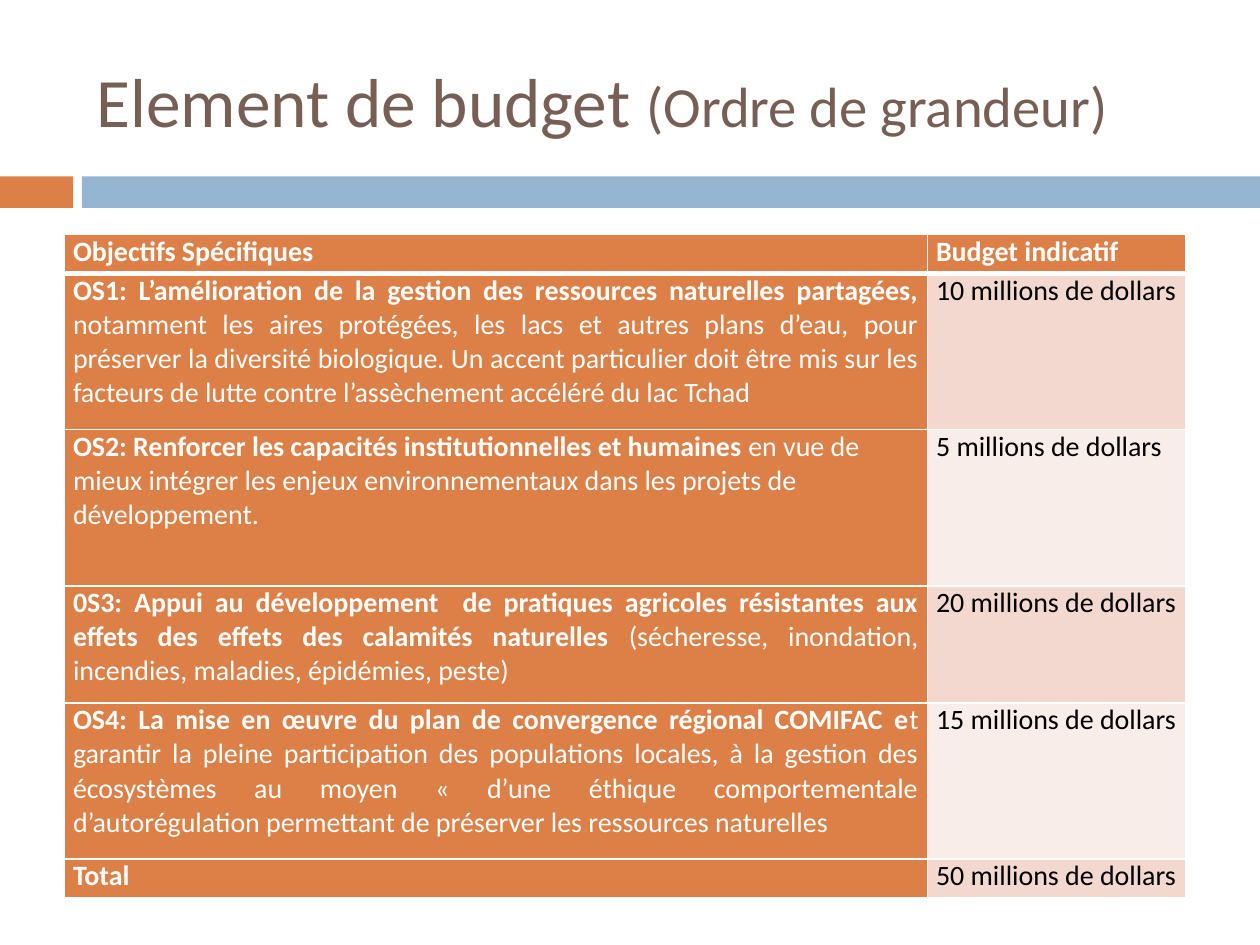
import pptx
import pptx.util
import pptx.dml.color
import pptx.enum.shapes
import pptx.enum.text
import pptx.oxml.ns
from lxml import etree

Inches, Pt = pptx.util.Inches, pptx.util.Pt
ALIGN = pptx.enum.text.PP_ALIGN
ANCHOR = pptx.enum.text.MSO_ANCHOR

# Content: each line is a list of (text, is_bold) runs
COLORS = {"orange": "DD8047", "blue": "94B6D2", "brown": "775F55", "white": "FFFFFF",
          "black": "000000", "band_dark": "F2D8CF", "band_light": "F9EDE9"}
TITLE = [("Element de budget ", 39.6), ("(Ordre de grandeur)", 32.4)]
HEADER = ("Objectifs Spécifiques", "Budget indicatif")
# bold lead, regular text, budget, row height
OBJECTIVES = [
    ("OS1: L’amélioration de la gestion des ressources naturelles partagées, ",
     "notamment les aires protégées, les lacs et autres plans d’eau, pour préserver la "
     "diversité biologique. Un accent particulier doit être mis sur les facteurs de lutte "
     "contre l’assèchement accéléré du lac Tchad",
     "10 millions de dollars", 1.24),
    ("OS2: Renforcer les capacités institutionnelles et humaines",
     " en vue de mieux intégrer les enjeux environnementaux dans les projets de développement.",
     "5 millions de dollars", 1.24),
    ("0S3: Appui au développement  de pratiques agricoles résistantes aux effets des effets "
     "des calamités naturelles ",
     "(sécheresse, inondation, incendies, maladies, épidémies, peste)",
     "20 millions de dollars", 0.93),
    ("OS4: La mise en œuvre du plan de convergence régional COMIFAC e",
     "t garantir la pleine participation des populations locales, à la gestion des "
     "écosystèmes au moyen « d’une éthique comportementale d’autorégulation permettant de "
     "préserver les ressources naturelles",
     "15 millions de dollars", 1.24),
    ("Total", "", "50 millions de dollars", 0.31),
]
LEFT_ALIGNED_ROW = 2
HEADER_HEIGHT = 0.31
COL_WIDTHS = (6.85, 2.05)


def rgb(name):
    return pptx.dml.color.RGBColor.from_string(COLORS[name])


def add_run(p, text, size=16, color="white", bold=False):
    r = p.add_run()
    r.text = text
    r.font.name = "Calibri"
    r.font.size = Pt(size)
    r.font.bold = bold
    r.font.color.rgb = rgb(color)


def add_bar(s, left, width, color):
    bar = s.shapes.add_shape(pptx.enum.shapes.MSO_SHAPE.RECTANGLE,
                             Inches(left), Inches(1.4), Inches(width), Inches(0.25))
    bar.shadow.inherit = False
    bar.fill.solid()
    bar.fill.fore_color.rgb = rgb(color)
    bar.line.fill.background()


def set_borders(cell, top=1, bottom=1):
    tc_pr = cell._tc.get_or_add_tcPr()
    qn = pptx.oxml.ns.qn
    for side, width in (("L", 1), ("R", 1), ("T", top), ("B", bottom)):
        ln = etree.SubElement(tc_pr, qn(f"a:ln{side}"), w=str(Pt(width)))
        fill = etree.SubElement(ln, qn("a:solidFill"))
        etree.SubElement(fill, qn("a:srgbClr"), val=COLORS["white"])


def fill_cell(cell, runs, fill, color="white", align=ALIGN.JUSTIFY, **borders):
    set_borders(cell, **borders)
    cell.fill.solid()
    cell.fill.fore_color.rgb = rgb(fill)
    cell.margin_left = cell.margin_right = Inches(0.07)
    cell.margin_top = cell.margin_bottom = 0
    cell.vertical_anchor = ANCHOR.TOP
    p = cell.text_frame.paragraphs[0]
    p.alignment = align
    for text, bold in runs:
        if text:
            add_run(p, text, color=color, bold=bold)


def main():
    prs = pptx.Presentation()
    prs.slide_width, prs.slide_height = Inches(10), Inches(7.5)
    s = prs.slides.add_slide(prs.slide_layouts[6])

    # Bars under the title
    add_bar(s, 0, 0.58, "orange")
    add_bar(s, 0.65, 9.35, "blue")

    # Title
    tf = s.shapes.add_textbox(Inches(0.67), Inches(0.25), Inches(8.92), Inches(1.08)).text_frame
    tf.word_wrap = True
    tf.vertical_anchor = ANCHOR.MIDDLE
    for text, size in TITLE:
        add_run(tf.paragraphs[0], text, size=size, color="brown")

    # Budget table
    heights = [HEADER_HEIGHT] + [row[-1] for row in OBJECTIVES]
    table = s.shapes.add_table(len(heights), len(COL_WIDTHS), Inches(0.51), Inches(1.86),
                               Inches(sum(COL_WIDTHS)), Inches(sum(heights))).table
    for col, width in zip(table.columns, COL_WIDTHS):
        col.width = Inches(width)
    for row, height in zip(table.rows, heights):
        row.height = Inches(height)

    for j, text in enumerate(HEADER):
        fill_cell(table.cell(0, j), [(text, True)], "orange", bottom=3)
    for i, (lead, rest, budget, _) in enumerate(OBJECTIVES, 1):
        top = 3 if i == 1 else 1
        align = ALIGN.LEFT if i == LEFT_ALIGNED_ROW else ALIGN.JUSTIFY
        fill_cell(table.cell(i, 0), [(lead, True), (rest, False)], "orange",
                  align=align, top=top)
        fill_cell(table.cell(i, 1), [(budget, False)],
                  "band_dark" if i % 2 else "band_light", color="black", top=top)
    table.cell(LEFT_ALIGNED_ROW, 0).text_frame.paragraphs[0].space_after = Pt(6)

    prs.save("out.pptx")


if __name__ == "__main__":
    main()
